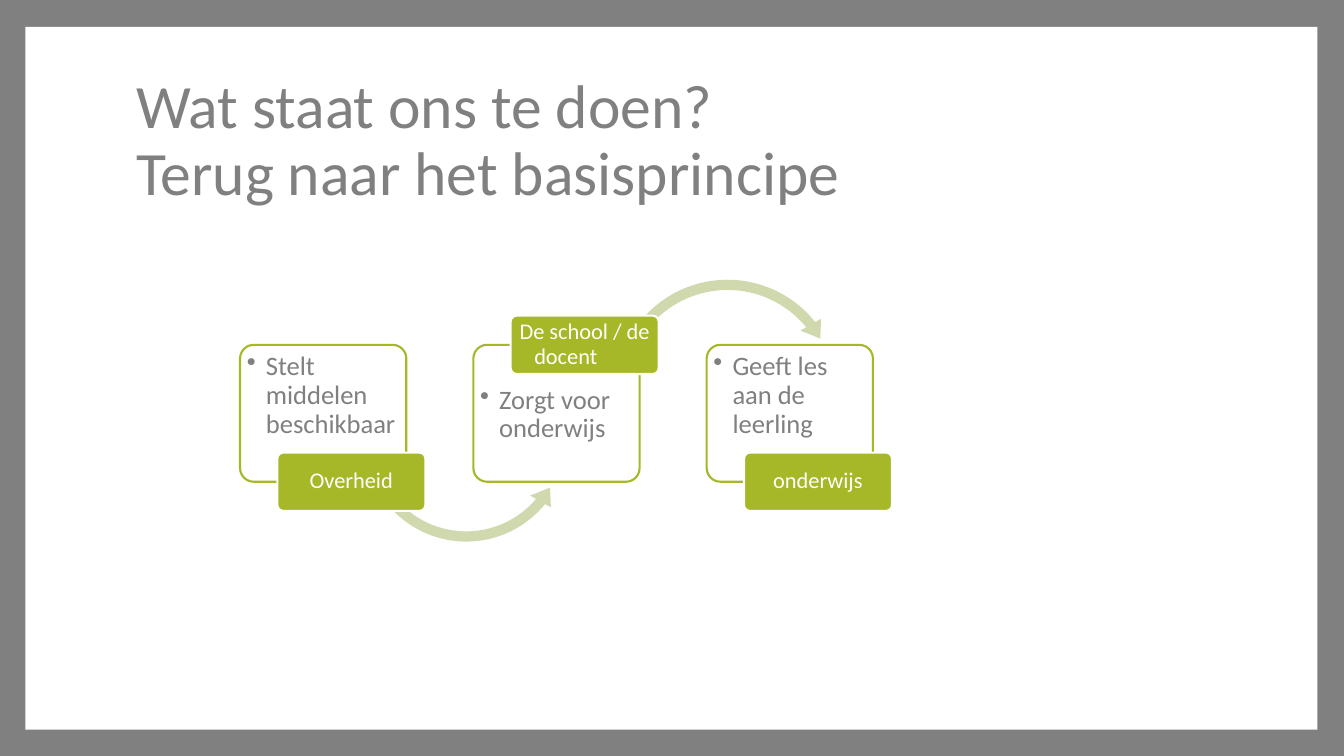
from lxml import etree
from pptx import Presentation
from pptx.dml.color import RGBColor
from pptx.enum.shapes import MSO_SHAPE
from pptx.enum.text import MSO_ANCHOR, PP_ALIGN
from pptx.oxml.ns import qn
from pptx.util import Cm, Pt

RECT = MSO_SHAPE.RECTANGLE
ROUNDED = MSO_SHAPE.ROUNDED_RECTANGLE
ARC_UNDER = MSO_SHAPE.LEFT_CIRCULAR_ARROW
ARC_OVER = MSO_SHAPE.CIRCULAR_ARROW
TOP, MIDDLE = MSO_ANCHOR.TOP, MSO_ANCHOR.MIDDLE
LEFT, CENTER = PP_ALIGN.LEFT, PP_ALIGN.CENTER

TITLE = ["Wat staat ons te doen? ", "Terug naar het basisprincipe"]
STEPS = [
    {"task": "Stelt middelen beschikbaar", "actor": "Overheid", "actor_on_top": False},
    {"task": "Zorgt voor onderwijs", "actor": "De school / de docent\t", "actor_on_top": True},
    {"task": "Geeft les aan de leerling", "actor": "onderwijs", "actor_on_top": False},
]
ARCS = [
    {"kind": ARC_UNDER, "at": (9.02, 8.36), "size": 5.46, "band": 4.7, "head": 5.5,
     "angles": (9.97, 39.57, 150.41)},
    {"kind": ARC_OVER, "at": (15.34, 6.88), "size": 5.99, "band": 4.3, "head": 5,
     "angles": (9.01, 321.13, 209.33)},
]

GREY, WHITE, GREEN, PALE_GREEN = "808080", "FFFFFF", "A6B727", "D0D8AD"
FONT = "Calibri"
CARD_LEFT, CARD_TOP, CARD_PITCH = 6.05, 8.69, 5.88
CARD_WIDTH, CARD_HEIGHT = 4.19, 3.45
LABEL_SHIFT, LABEL_WIDTH, LABEL_HEIGHT = 0.94, 3.73, 1.47
BULLET_INDENT = 0.48


def color(hex_text):
    return RGBColor.from_string(hex_text)


def add_box(page, kind, left, top, width, height, fill, line=None):
    box = page.shapes.add_shape(kind, Cm(left), Cm(top), Cm(width), Cm(height))
    box.shadow.inherit = False
    box.fill.solid()
    box.fill.fore_color.rgb = color(fill)
    if line:
        box.line.color.rgb = color(line)
        box.line.width = Pt(1.5)
    else:
        box.line.fill.background()
    return box


def write(box, lines, size, ink, align, anchor, insets):
    frame = box.text_frame
    frame.word_wrap = True
    frame.vertical_anchor = anchor
    side, above, below = insets
    frame.margin_left = frame.margin_right = Cm(side)
    frame.margin_top, frame.margin_bottom = Cm(above), Cm(below)
    para = frame.paragraphs[0]
    para.alignment = align
    para.line_spacing = 0.9
    for number, line in enumerate(lines):
        if number:
            para.add_line_break()
        span = para.add_run()
        span.text = line
        span.font.name = FONT
        span.font.size = Pt(size)
        span.font.color.rgb = color(ink)
    return para


def add_bullet(para):
    settings = para._p.get_or_add_pPr()
    settings.set("marL", str(Cm(BULLET_INDENT)))
    settings.set("indent", str(-Cm(BULLET_INDENT)))
    etree.SubElement(settings, qn("a:buChar")).set("char", "•")


def add_card(page, left, step):
    card = add_box(page, ROUNDED, left, CARD_TOP, CARD_WIDTH, CARD_HEIGHT, WHITE, GREEN)
    card.adjustments[0] = 0.1
    above = 0.94 if step["actor_on_top"] else 0.1
    add_bullet(write(card, [step["task"]], 19, GREY, LEFT, TOP, (0.07, above, 0.1)))


def add_label(page, left, step):
    edge = CARD_TOP if step["actor_on_top"] else CARD_TOP + CARD_HEIGHT
    label = add_box(page, ROUNDED, left + LABEL_SHIFT, edge - LABEL_HEIGHT / 2,
                    LABEL_WIDTH, LABEL_HEIGHT, GREEN, WHITE)
    label.adjustments[0] = 0.1
    write(label, [step["actor"]], 16, WHITE, CENTER, MIDDLE, (0.08, 0.05, 0.05))


def add_arc(page, arc):
    left, top = arc["at"]
    shape = add_box(page, arc["kind"], left, top, arc["size"], arc["size"], PALE_GREEN)
    angles = [degrees * 0.6 for degrees in arc["angles"]]
    values = [arc["band"] / 100, *angles, arc["head"] / 100]
    for number, value in enumerate(values):
        shape.adjustments[number] = value


def main():
    deck = Presentation()
    deck.slide_width, deck.slide_height = Cm(33.87), Cm(19.05)
    page = deck.slides.add_slide(deck.slide_layouts[6])
    page.background.fill.solid()
    page.background.fill.fore_color.rgb = color(GREY)
    add_box(page, RECT, 0.64, 0.68, 32.56, 17.71, WHITE)
    title = page.shapes.add_textbox(Cm(3.18), Cm(1.7), Cm(27.43), Cm(3.76))
    write(title, TITLE, 44, GREY, LEFT, MIDDLE, (0.25, 0.13, 0.13))
    for number, step in enumerate(STEPS):
        left = CARD_LEFT + number * CARD_PITCH
        add_card(page, left, step)
        if number < len(ARCS):
            add_arc(page, ARCS[number])
        add_label(page, left, step)
    deck.save("out.pptx")


if __name__ == "__main__":
    main()
